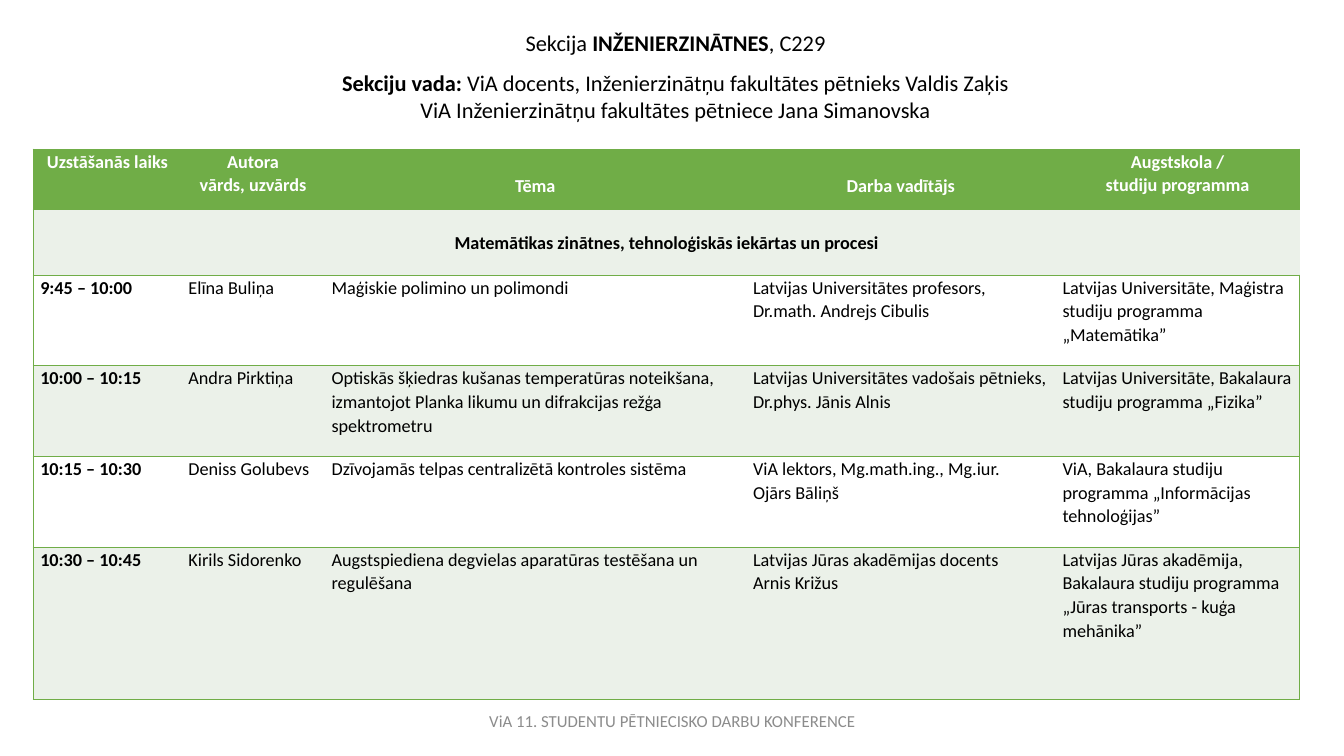
import pptx
import pptx.dml.color
import pptx.enum.text
import pptx.oxml.ns
import pptx.util
import lxml.etree

Inches = pptx.util.Inches
ALIGN = pptx.enum.text.PP_ALIGN
ANCHOR = pptx.enum.text.MSO_ANCHOR

COLOURS = {
    "green": "70AD47",
    "pale": "EBF1E9",
    "white": "FFFFFF",
    "black": "000000",
    "grey": "8C8C8C",
}
COLUMN_WIDTHS = [1.47, 1.42, 4.18, 3.07, 2.42]
ROW_HEIGHTS = [0.6, 0.65, 0.9, 0.9, 0.9, 1.51]
LINE_HEIGHT = 0.24
HEADINGS = [
    ["Uzstāšanās laiks"],
    ["Autora", "vārds, uzvārds"],
    ["Tēma"],
    ["Darba vadītājs"],
    ["Augstskola /", "studiju programma"],
]
LOWERED_HEADINGS = ["Tēma", "Darba vadītājs"]
TOPIC_GROUP = "Matemātikas zinātnes, tehnoloģiskās iekārtas un procesi"
TALKS = [
    [["9:45 – 10:00"], ["Elīna Buliņa"], ["Maģiskie polimino un polimondi"],
     ["Latvijas Universitātes profesors, Dr.math. Andrejs Cibulis"],
     ["Latvijas Universitāte, Maģistra studiju programma „Matemātika”"]],
    [["10:00 – 10:15"], ["Andra Pirktiņa"],
     ["Optiskās šķiedras kušanas temperatūras noteikšana, izmantojot Planka "
      "likumu un difrakcijas režģa spektrometru"],
     ["Latvijas Universitātes vadošais pētnieks, Dr.phys. Jānis Alnis"],
     ["Latvijas Universitāte, Bakalaura studiju programma „Fizika”"]],
    [["10:15 – 10:30"], ["Deniss Golubevs"],
     ["Dzīvojamās telpas centralizētā kontroles sistēma"],
     ["ViA lektors, Mg.math.ing., Mg.iur.", "Ojārs Bāliņš"],
     ["ViA, Bakalaura studiju programma „Informācijas tehnoloģijas”"]],
    [["10:30 – 10:45"], ["Kirils Sidorenko"],
     ["Augstspiediena degvielas aparatūras testēšana un regulēšana"],
     ["Latvijas Jūras akadēmijas docents", "Arnis Križus"],
     ["Latvijas Jūras akadēmija, Bakalaura studiju programma "
      "„Jūras transports - kuģa mehānika”"]],
]


def colour(name):
    """Return the named colour."""
    return pptx.dml.color.RGBColor.from_string(COLOURS[name])


def apply_format(target, values):
    """Set each attribute of the target from a dict."""
    for name, value in values.items():
        setattr(target, name, value)


def write_paragraphs(frame, paragraphs, size, ink):
    """Write (format, [(text, bold)]) paragraphs into a text frame."""
    for index, (layout, spans) in enumerate(paragraphs):
        para = frame.add_paragraph() if index else frame.paragraphs[0]
        apply_format(para, layout)
        for text, bold in spans:
            span = para.add_run()
            span.text = text
            apply_format(span.font, {"name": "Calibri", "size": pptx.util.Pt(size), "bold": bold})
            span.font.color.rgb = colour(ink)


def add_text(page, box, paragraphs, size, ink, anchor):
    """Add a wrapping text box at the given left, top, width and height."""
    frame = page.shapes.add_textbox(*map(Inches, box)).text_frame
    apply_format(frame, {"word_wrap": True, "vertical_anchor": anchor})
    write_paragraphs(frame, paragraphs, size, ink)


def add_heading(page, box):
    """Add the section name and its chairs."""
    paragraphs = [
        ({"alignment": ALIGN.CENTER, "line_spacing": 1.07},
         [("Sekcija ", False), ("INŽENIERZINĀTNES", True), (", C229", False)]),
        ({"alignment": ALIGN.CENTER, "line_spacing": 1.5},
         [("Sekciju vada: ", True),
          ("ViA docents, Inženierzinātņu fakultātes pētnieks Valdis Zaķis", False)]),
        ({"alignment": ALIGN.CENTER},
         [("ViA Inženierzinātņu fakultātes pētniece Jana Simanovska", False)]),
    ]
    add_text(page, box, paragraphs, 16, "black", ANCHOR.TOP)


def add_footer(page, box):
    """Add the conference name."""
    paragraphs = [({"alignment": ALIGN.CENTER},
                   [("ViA 11. STUDENTU PĒTNIECISKO DARBU KONFERENCE", False)])]
    add_text(page, box, paragraphs, 12, "grey", ANCHOR.MIDDLE)


def set_borders(cell, visible):
    """Draw the visible sides of a cell in green and clear the others."""
    properties = cell._tc.get_or_add_tcPr()
    qualify = pptx.oxml.ns.qn
    for side in "LRTB":
        line = lxml.etree.SubElement(properties, qualify(f"a:ln{side}"), w="12700")
        if side in visible:
            paint = lxml.etree.SubElement(line, qualify("a:solidFill"))
            lxml.etree.SubElement(paint, qualify("a:srgbClr"), val=COLOURS["green"])
        else:
            lxml.etree.SubElement(line, qualify("a:noFill"))


def style_cell(cell, column, background):
    """Give a cell its margins, borders and fill."""
    apply_format(cell, {"margin_left": Inches(0.07), "margin_right": Inches(0.07),
                        "margin_top": 0, "margin_bottom": 0})
    outer = {0: "L", len(COLUMN_WIDTHS) - 1: "R"}
    set_borders(cell, "TB" + outer.get(column, ""))
    cell.fill.solid()
    cell.fill.fore_color.rgb = colour(background)


def fill_cell(cell, lines, bold, ink, alignment):
    """Write the lines of a table cell."""
    layout = {"alignment": alignment, "line_spacing": 1.07}
    write_paragraphs(cell.text_frame, [(layout, [(line, bold)]) for line in lines], 13, ink)


def add_programme(page, box):
    """Add the timetable of talks."""
    table = page.shapes.add_table(
        len(ROW_HEIGHTS), len(COLUMN_WIDTHS), *map(Inches, box)).table
    for column, width in zip(table.columns, COLUMN_WIDTHS):
        column.width = Inches(width)
    for row, height in zip(table.rows, ROW_HEIGHTS):
        row.height = Inches(height)

    for row in range(len(ROW_HEIGHTS)):
        background = "green" if row == 0 else ("pale" if row % 2 else "white")
        for column in range(len(COLUMN_WIDTHS)):
            style_cell(table.cell(row, column), column, background)

    for column, lines in enumerate(HEADINGS):
        cell = table.cell(0, column)
        fill_cell(cell, lines, True, "white", ALIGN.CENTER)
        if lines[0] in LOWERED_HEADINGS:
            cell.margin_top = Inches(LINE_HEIGHT)

    group = table.cell(1, 0)
    group.merge(table.cell(1, len(COLUMN_WIDTHS) - 1))
    group.vertical_anchor = ANCHOR.MIDDLE
    fill_cell(group, [TOPIC_GROUP], True, "black", ALIGN.CENTER)

    for row, talk in enumerate(TALKS, start=2):
        for column, lines in enumerate(talk):
            alignment = ALIGN.LEFT if column else ALIGN.JUSTIFY
            fill_cell(table.cell(row, column), lines, column == 0, "black", alignment)


def main():
    """Build and save the section programme."""
    deck = pptx.Presentation()
    apply_format(deck, {"slide_width": Inches(13.33), "slide_height": Inches(7.5)})
    page = deck.slides.add_slide(deck.slide_layouts[6])
    add_footer(page, (4.42, 6.95, 4.5, 0.4))
    add_heading(page, (0.33, 0.22, 12.74, 1.06))
    add_programme(page, (0.33, 1.48, sum(COLUMN_WIDTHS), sum(ROW_HEIGHTS)))
    deck.save("out.pptx")


if __name__ == "__main__":
    main()
